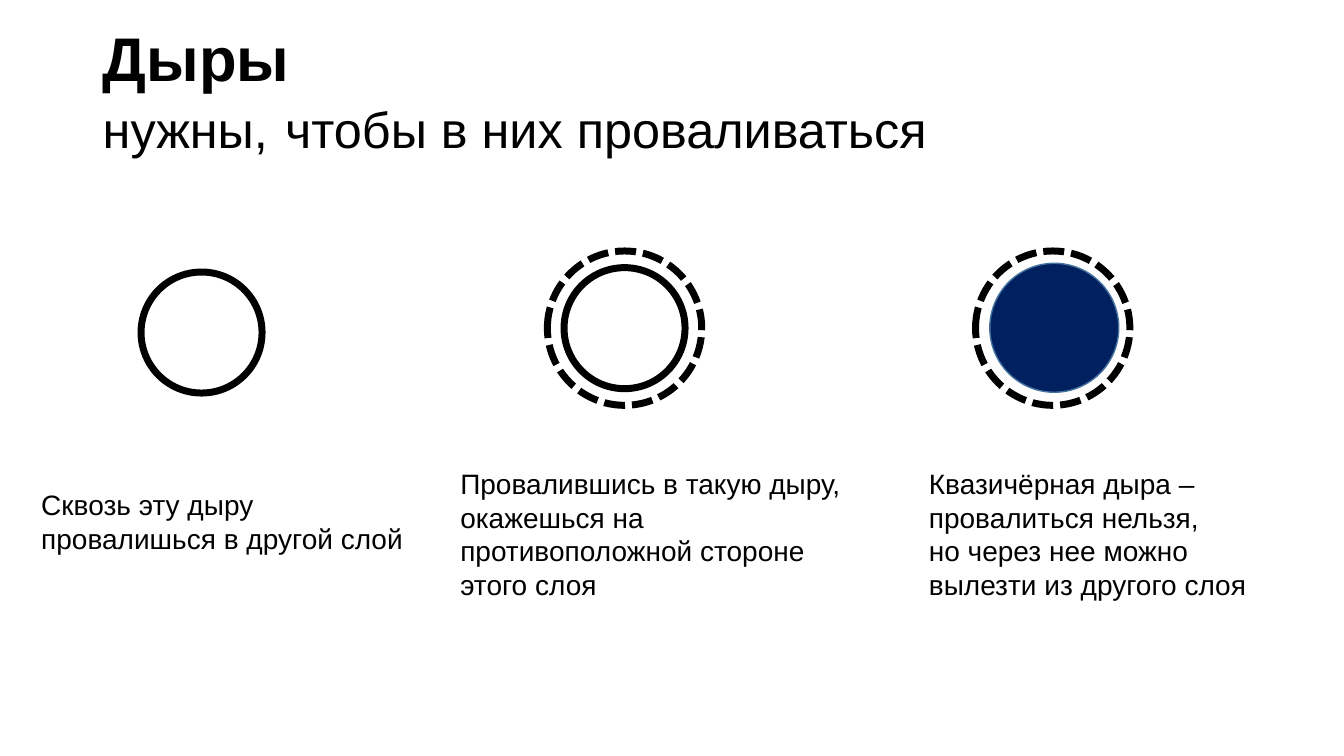
"""Build a slide that explains three kinds of holes between layers."""
from typing import Any, NamedTuple

from pptx import Presentation
from pptx.dml.color import RGBColor
from pptx.enum import dml, shapes, text
from pptx.util import Cm, Pt

COLORS = {"ink": "000000", "paper": "FFFFFF", "navy": "002060", "rim": "43739E"}
HOLE = 3.05
RING = 3.89


class Circle(NamedTuple):
    center_x: float
    center_y: float
    diameter: float
    fill: str = "paper"
    line: str = "ink"
    width: float = 5
    dashed: bool = False


class Piece(NamedTuple):
    content: str
    size: float = 20
    bold: bool = False


class TextBlock(NamedTuple):
    left: float
    top: float
    width: float
    height: float
    paragraphs: list[list[list[Piece]]]
    frame_format: dict[str, Any] = {}
    line_spacing: float = 1.0


def caption(left: float, top: float, width: float, height: float,
            lines: list[str], wrap: bool = True) -> TextBlock:
    """Describe a caption with one paragraph for each line."""
    return TextBlock(left, top, width, height, [[[Piece(line)]] for line in lines],
                     {"word_wrap": wrap, "auto_size": text.MSO_AUTO_SIZE.SHAPE_TO_FIT_TEXT})


CIRCLES = [
    Circle(26.53, 8.27, RING, dashed=True),
    Circle(26.57, 8.26, 3.25, "navy", "rim", 1),
    Circle(15.74, 8.27, RING, dashed=True),
    Circle(15.74, 8.27, HOLE),
    Circle(5.08, 8.38, HOLE),
]

TITLE = TextBlock(
    2.34, 0.56, 21.59, 3.68,
    [[[Piece("Дыры ", 44, True)],
      [Piece("нужны,", 36), Piece(" ", 44), Piece("чтобы в них проваливаться", 36)]]],
    {"word_wrap": True, "vertical_anchor": text.MSO_ANCHOR.MIDDLE}, 0.9)

CAPTIONS = [
    caption(0.79, 12.17, 10.01, 1.96,
            ["Сквозь эту дыру", "провалишься в другой слой"], wrap=False),
    caption(11.35, 11.63, 10.67, 3.68,
            ["Провалившись в такую дыру,", "окажешься на противоположной стороне этого слоя"]),
    caption(23.16, 11.63, 8.94, 3.68,
            ["Квазичёрная дыра –", "провалиться нельзя,",
             "но через нее можно", "вылезти из другого слоя"]),
]


def color(name: str) -> RGBColor:
    """Look up a named colour."""
    return RGBColor.from_string(COLORS[name])


def apply_format(target: Any, values: dict[str, Any]) -> None:
    """Set each attribute of the target from the format values."""
    for name, value in values.items():
        setattr(target, name, value)


def draw_circle(slide: Any, circle: Circle) -> None:
    """Draw a circle around its centre."""
    radius = circle.diameter / 2
    shape = slide.shapes.add_shape(
        shapes.MSO_SHAPE.OVAL, Cm(circle.center_x - radius), Cm(circle.center_y - radius),
        Cm(circle.diameter), Cm(circle.diameter))
    shape.shadow.inherit = False
    shape.fill.solid()
    shape.fill.fore_color.rgb = color(circle.fill)
    shape.line.color.rgb = color(circle.line)
    shape.line.width = Pt(circle.width)
    if circle.dashed:
        shape.line.dash_style = dml.MSO_LINE.SQUARE_DOT


def draw_text(slide: Any, block: TextBlock) -> None:
    """Draw a text box with its paragraphs, lines and runs."""
    shape = slide.shapes.add_textbox(
        Cm(block.left), Cm(block.top), Cm(block.width), Cm(block.height))
    frame = shape.text_frame
    apply_format(frame, block.frame_format)
    for index, lines in enumerate(block.paragraphs):
        paragraph = frame.add_paragraph() if index else frame.paragraphs[0]
        paragraph.line_spacing = block.line_spacing
        for line_index, pieces in enumerate(lines):
            if line_index:
                paragraph.add_line_break()
            for piece in pieces:
                run = paragraph.add_run()
                run.text = piece.content
                apply_format(run.font, {"name": "Arial", "size": Pt(piece.size),
                                        "bold": piece.bold})
                run.font.color.rgb = color("ink")


def main() -> None:
    """Create and save the presentation."""
    presentation = Presentation()
    apply_format(presentation, {"slide_width": Cm(33.87), "slide_height": Cm(19.05)})
    slide = presentation.slides.add_slide(presentation.slide_layouts[6])
    for circle in CIRCLES:
        draw_circle(slide, circle)
    for block in [TITLE, *CAPTIONS]:
        draw_text(slide, block)
    presentation.save("out.pptx")


if __name__ == "__main__":
    main()
